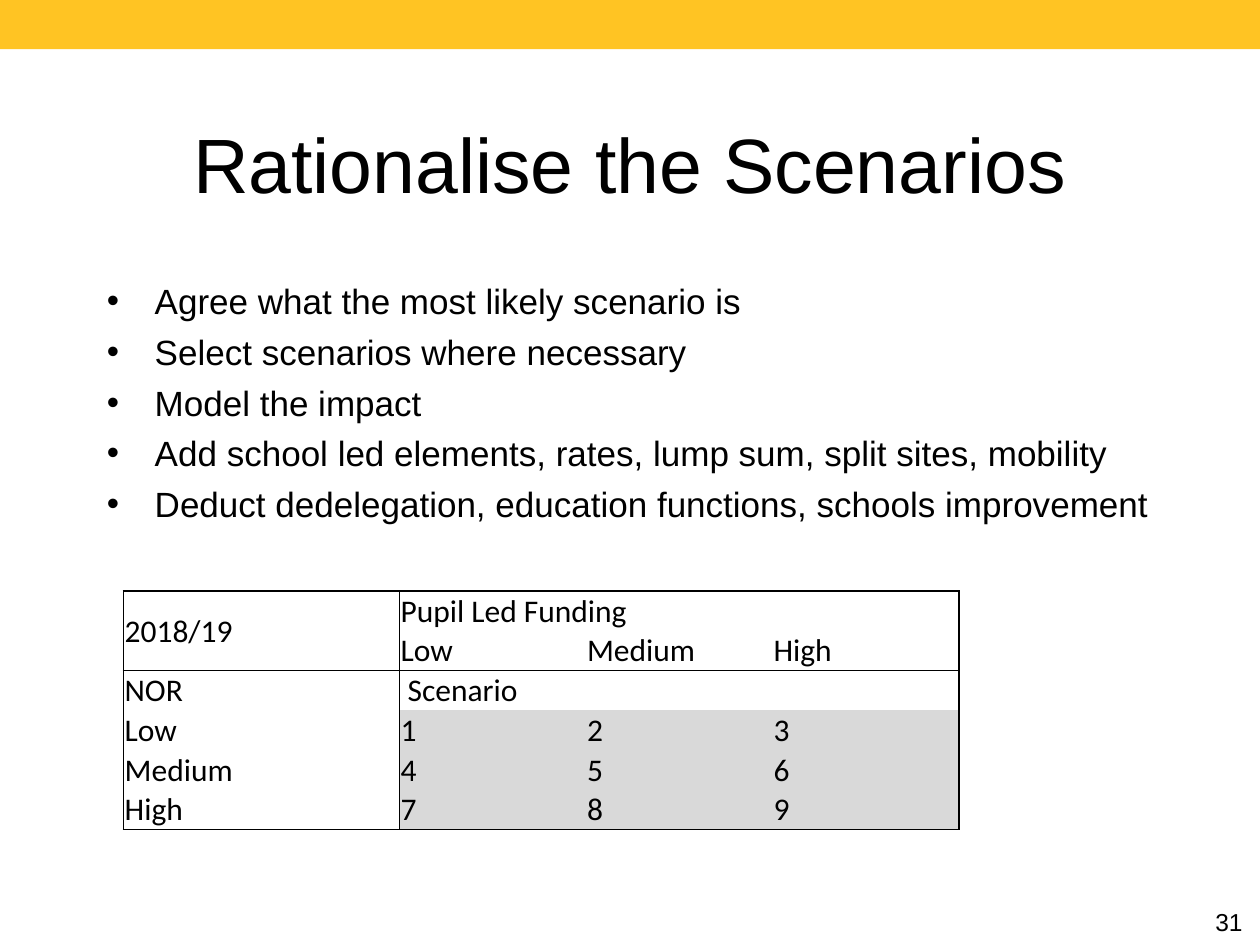
from lxml.etree import SubElement
from pptx import Presentation
from pptx.dml.color import RGBColor
from pptx.enum.shapes import MSO_SHAPE
from pptx.enum.text import MSO_ANCHOR, PP_ALIGN
from pptx.oxml.ns import qn
from pptx.util import Inches, Pt

FONT = "Arial"
BLACK = "000000"
YELLOW = "FFC423"
GREY = "D9D9D9"
BULLETS = [
    "Agree what the most likely scenario is",
    "Select scenarios where necessary",
    "Model the impact",
    "Add school led elements, rates, lump sum, split sites, mobility",
    "Deduct dedelegation, education functions, schools improvement",
]
SCENARIOS = [
    ["2018/19", "Pupil Led Funding", "", ""],
    ["", "Low", "Medium", "High"],
    ["NOR", " Scenario", "", ""],
    ["Low", "1", "2", "3"],
    ["Medium", "4", "5", "6"],
    ["High", "7", "8", "9"],
]
BOLD_LABELS = {"2018/19", "Pupil Led Funding", "NOR"}
COLUMN_WIDTHS = [2.19, 1.48, 1.48, 1.48]
ROW_HEIGHT = 0.26


def color(value):
    """Turn a hex string into a colour."""
    return RGBColor.from_string(value)


def style(paragraph, size, align=PP_ALIGN.LEFT, bold=False):
    """Set the alignment and font of a paragraph."""
    paragraph.alignment = align
    font = paragraph.font
    font.name, font.size, font.bold = FONT, Pt(size), bold
    font.color.rgb = color(BLACK)


def add_band(slide):
    """Add the coloured band along the top edge."""
    band = slide.shapes.add_shape(MSO_SHAPE.RECTANGLE, 0, 0, Inches(10), Inches(0.39))
    band.shadow.inherit = False
    band.fill.solid()
    band.fill.fore_color.rgb = color(YELLOW)
    band.line.fill.background()


def set_title(slide, text):
    """Place and format the title."""
    title = slide.shapes.title
    title.left, title.top = Inches(0.75), Inches(0.67)
    title.width, title.height = Inches(8.5), Inches(1.25)
    title.text_frame.text = text
    title.text_frame.vertical_anchor = MSO_ANCHOR.MIDDLE
    style(title.text_frame.paragraphs[0], 44, PP_ALIGN.CENTER)


def add_text_frame(slide, left, top, width, height):
    """Add a wrapping text box and return its text frame."""
    box = slide.shapes.add_textbox(Inches(left), Inches(top), Inches(width), Inches(height))
    box.text_frame.word_wrap = True
    return box.text_frame


def add_bullets(slide, lines):
    """Add the bulleted list."""
    frame = add_text_frame(slide, 0.75, 2.17, 8.5, 2.25)
    frame.text = "\n".join(lines)
    for index, paragraph in enumerate(frame.paragraphs):
        properties = paragraph._p.get_or_add_pPr()
        properties.set("marL", str(Inches(0.38)))
        properties.set("indent", str(Inches(-0.38)))
        if index:
            paragraph.space_before = Pt(5)
        SubElement(properties, qn("a:buFont"), typeface=FONT)
        SubElement(properties, qn("a:buChar"), char="•")
        style(paragraph, 20)


def set_borders(cell, **edges):
    """Draw the edges that are on and clear the others."""
    properties = cell._tc.get_or_add_tcPr()
    for edge, visible in edges.items():
        line = SubElement(properties, qn(f"a:ln{edge}"), w=str(Pt(1)))
        if visible:
            fill = SubElement(line, qn("a:solidFill"))
            SubElement(fill, qn("a:srgbClr"), val=BLACK)
        else:
            SubElement(line, qn("a:noFill"))


def format_cell(cell, row, column, text):
    """Fill in one cell with its text, borders and shading."""
    header = row == 0
    number = row > 2 and column > 0
    cell.margin_left = cell.margin_right = cell.margin_top = Inches(0.01)
    cell.margin_bottom = 0
    cell.vertical_anchor = MSO_ANCHOR.MIDDLE if header and column == 0 else MSO_ANCHOR.BOTTOM
    paragraph = cell.text_frame.paragraphs[0]
    if text:
        cell.text = text
    else:
        SubElement(paragraph._p, qn("a:endParaRPr"), sz="1600")
    align = PP_ALIGN.CENTER if header or number else PP_ALIGN.LEFT
    style(paragraph, 16, align, text in BOLD_LABELS)
    last_row = row + cell.span_height - 1
    last_column = column + cell.span_width - 1
    set_borders(cell, L=column in (0, 1), R=last_column in (0, 3),
                T=row in (0, 2), B=last_row in (1, 5))
    if number:
        cell.fill.solid()
        cell.fill.fore_color.rgb = color(GREY)
    else:
        cell.fill.background()


def add_scenario_table(slide, rows):
    """Add the grid of numbered scenarios."""
    table = slide.shapes.add_table(
        len(rows), len(COLUMN_WIDTHS), Inches(0.98), Inches(4.69),
        Inches(sum(COLUMN_WIDTHS)), Inches(ROW_HEIGHT * len(rows))).table
    table.first_row = table.horz_banding = False
    for column, width in zip(table.columns, COLUMN_WIDTHS):
        column.width = Inches(width)
    for row in table.rows:
        row.height = Inches(ROW_HEIGHT)
    table.cell(0, 0).merge(table.cell(1, 0))
    table.cell(0, 1).merge(table.cell(0, 3))
    for row, texts in enumerate(rows):
        for column, text in enumerate(texts):
            format_cell(table.cell(row, column), row, column, text)


def add_page_number(slide, number):
    """Add the page number at the lower right."""
    frame = add_text_frame(slide, 7.88, 7.15, 2.08, 0.31)
    frame.text = number
    style(frame.paragraphs[0], 14, PP_ALIGN.RIGHT)


def main():
    """Build the slide and save it."""
    presentation = Presentation()
    presentation.slide_width, presentation.slide_height = Inches(10), Inches(7.5)
    slide = presentation.slides.add_slide(presentation.slide_layouts[5])
    add_band(slide)
    set_title(slide, "Rationalise the Scenarios")
    add_scenario_table(slide, SCENARIOS)
    add_page_number(slide, "31")
    add_bullets(slide, BULLETS)
    presentation.save("out.pptx")


if __name__ == "__main__":
    main()
